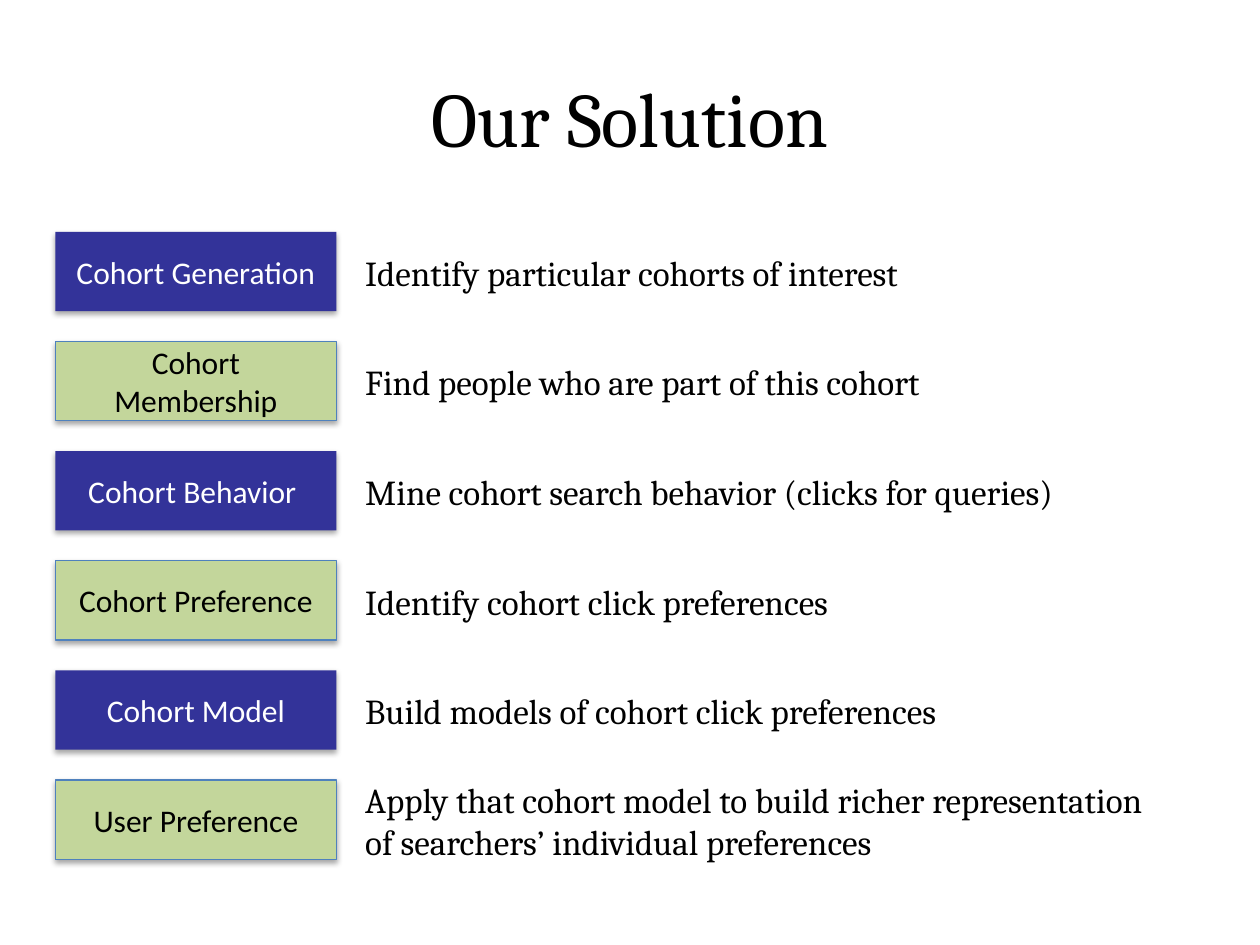
import pptx
from lxml import etree
from pptx.dml.color import RGBColor
from pptx.enum.shapes import MSO_SHAPE
from pptx.enum.text import MSO_ANCHOR, MSO_AUTO_SIZE, PP_ALIGN
from pptx.oxml.ns import qn
from pptx.util import Inches, Pt

TITLE = "Our Solution"
# step, explanation, width of the explanation in inches
STEPS = [
    ("Cohort Generation", "Identify particular cohorts of interest", 5.3),
    ("Cohort Membership", "Find people who are part of this cohort", 5.52),
    ("Cohort Behavior ", "Mine cohort search behavior (clicks for queries)", 6.62),
    ("Cohort Preference", "Identify cohort click preferences", 4.7),
    ("Cohort Model", "Build models of cohort click preferences", 5.67),
    ("User Preference",
     "Apply that cohort model to build richer representation \v"
     "of searchers’ individual preferences", 7.51),
]

BLACK = RGBColor(0x00, 0x00, 0x00)
WHITE = RGBColor(0xFF, 0xFF, 0xFF)
INDIGO = RGBColor(0x33, 0x33, 0x99)
GREEN = RGBColor(0xC3, 0xD6, 0x9B)
BLUE = RGBColor(0x4F, 0x81, 0xBD)

STEP_LEFT, STEP_TOP, STEP_WIDTH, STEP_HEIGHT = 0.44, 1.84, 2.23, 0.63
PITCH = 0.87
EXPLANATION_LEFT = 2.3
EXPLANATION_DROP = 0.01  # explanations sit slightly below the step's centre
LINE_HEIGHT, INSETS = 0.33, 0.11


def style(paragraph, font_name, size, color):
    paragraph.font.name = font_name
    paragraph.font.size = Pt(size)
    paragraph.font.color.rgb = color


def add_soft_shadow(shape):
    """Give the shape a faint black shadow straight below it."""
    shape.shadow.inherit = False
    effects = shape._element.spPr.find(qn("a:effectLst"))
    shadow = etree.SubElement(effects, qn("a:outerShdw"), blurRad="40000",
                              dist="23000", dir="5400000", rotWithShape="0")
    color = etree.SubElement(shadow, qn("a:srgbClr"), val="000000")
    etree.SubElement(color, qn("a:alpha"), val="35000")


def add_step(slide, name, top, highlighted):
    step = slide.shapes.add_shape(
        MSO_SHAPE.RECTANGLE, Inches(STEP_LEFT), Inches(top),
        Inches(STEP_WIDTH), Inches(STEP_HEIGHT))
    step.fill.solid()
    step.fill.fore_color.rgb = GREEN if highlighted else INDIGO
    if highlighted:
        step.line.color.rgb = BLUE
        step.line.width = Pt(0.75)
    else:
        step.line.fill.background()
    add_soft_shadow(step)
    step.text_frame.text = name
    step.text_frame.vertical_anchor = MSO_ANCHOR.MIDDLE
    label = step.text_frame.paragraphs[0]
    label.alignment = PP_ALIGN.CENTER
    style(label, "Calibri", 18, BLACK if highlighted else WHITE)


def add_explanation(slide, text, width, middle):
    height = LINE_HEIGHT * len(text.split("\v")) + INSETS
    explanation = slide.shapes.add_textbox(
        Inches(EXPLANATION_LEFT), Inches(middle - height / 2),
        Inches(width), Inches(height))
    frame = explanation.text_frame
    frame.word_wrap = False
    frame.auto_size = MSO_AUTO_SIZE.SHAPE_TO_FIT_TEXT
    frame.text = text
    frame.paragraphs[0].level = 1
    style(frame.paragraphs[0], "Cambria", 20, BLACK)


def main():
    deck = pptx.Presentation()
    deck.slide_width, deck.slide_height = Inches(10), Inches(7.5)
    slide = deck.slides.add_slide(deck.slide_layouts[5])

    title = slide.shapes.title
    title.left, title.top = Inches(0.5), Inches(0.3)
    title.width, title.height = Inches(9), Inches(1.25)
    title.text_frame.text = TITLE
    style(title.text_frame.paragraphs[0], "Cambria", 44, BLACK)

    for row, (name, explanation, width) in enumerate(STEPS):
        top = STEP_TOP + row * PITCH
        add_step(slide, name, top, highlighted=row % 2 == 1)
        add_explanation(slide, explanation, width,
                        top + STEP_HEIGHT / 2 + EXPLANATION_DROP)

    deck.save("out.pptx")


if __name__ == "__main__":
    main()
